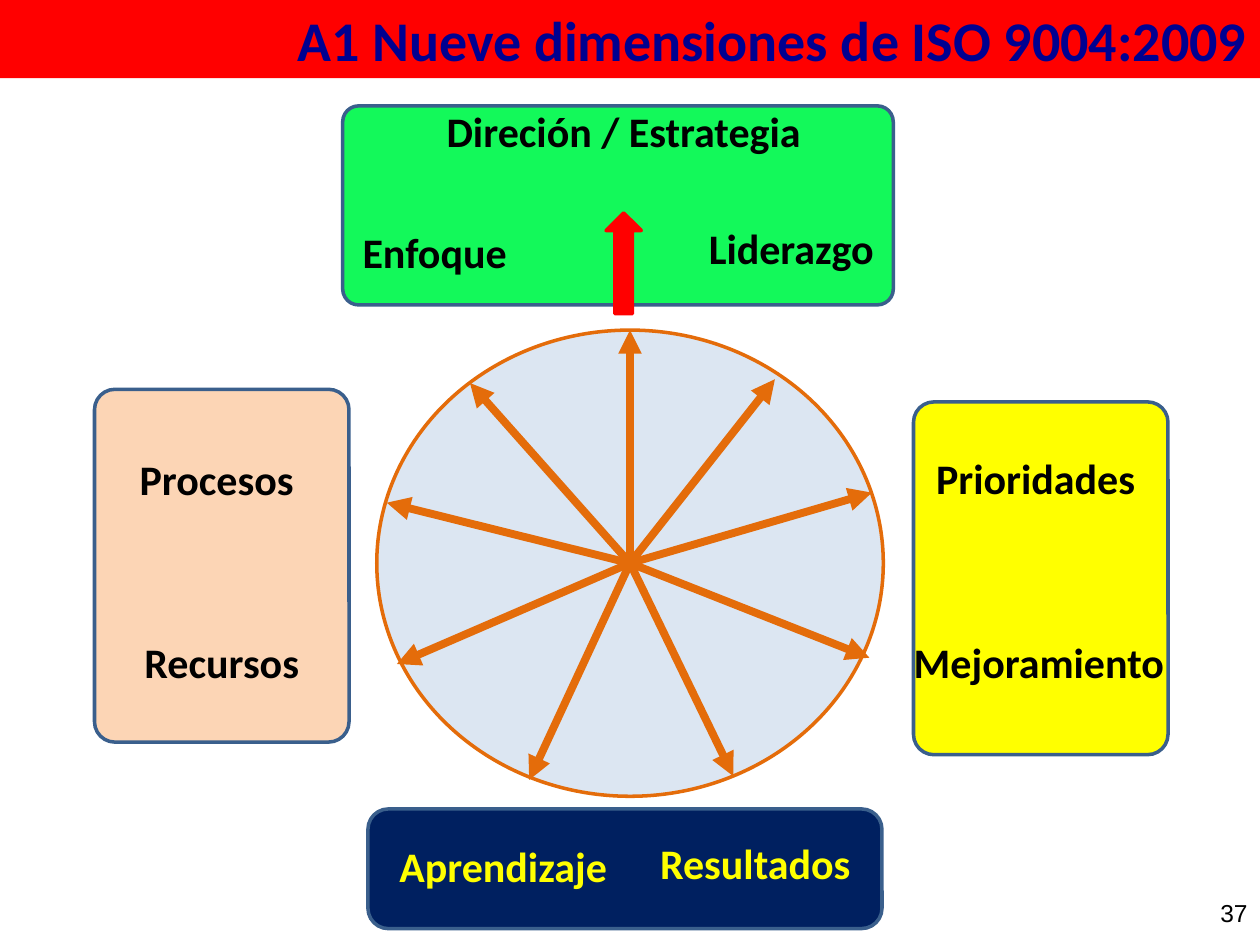
from pptx import Presentation
from pptx.dml.color import RGBColor
from pptx.enum.shapes import MSO_CONNECTOR, MSO_SHAPE
from pptx.enum.text import MSO_ANCHOR, PP_ALIGN
from pptx.oxml.ns import qn
from pptx.util import Inches, Pt
from lxml import etree

ROUNDED = MSO_SHAPE.ROUNDED_RECTANGLE
RECTANGLE = MSO_SHAPE.RECTANGLE
ELLIPSE = MSO_SHAPE.OVAL
UP_ARROW = MSO_SHAPE.UP_ARROW
STRAIGHT = MSO_CONNECTOR.STRAIGHT
MIDDLE = MSO_ANCHOR.MIDDLE
CENTER, RIGHT = PP_ALIGN.CENTER, PP_ALIGN.RIGHT

BLACK, YELLOW, RED = "000000", "FFFF00", "FF0000"
BORDER, ORANGE = "3A5F8C", "E46C0A"

TITLE = "A1 Nueve dimensiones de ISO 9004:2009"
PAGE_NUMBER = "37"

PANELS = [
    ((7.25, 3.19, 2.02, 2.8), YELLOW, 0.08),
    ((0.75, 3.09, 2.02, 2.8), "FCD5B5", 0.08),
    ((2.72, 0.84, 4.37, 1.58), "13F95A", 0.08),
    ((2.92, 6.42, 4.08, 0.95), "002060", 0.17),
]

LABEL_HEIGHT = 0.5
LABELS = [
    ("Direción / Estrategia", 3.43, 0.79, 3.04, BLACK),
    ("Enfoque", 2.77, 1.75, 1.36, BLACK),
    ("Liderazgo", 5.52, 1.72, 1.52, BLACK),
    ("Resultados", 5.13, 6.6, 1.73, YELLOW),
    ("Aprendizaje", 3.06, 6.62, 1.87, YELLOW),
    ("Recursos", 1.04, 5, 1.44, BLACK),
    ("Procesos", 1, 3.55, 1.44, BLACK),
    ("Mejoramiento", 7.14, 5, 2.21, BLACK),
    ("Prioridades", 7.32, 3.54, 1.8, BLACK),
]

HUB = (5, 4.47)
WHEEL_SIZE = (4.02, 3.7)
RAY_TIPS = [
    (5, 2.62), (6.15, 3.01), (6.92, 3.91),
    (6.9, 5.22), (5.82, 6.16), (4.2, 6.19),
    (3.15, 5.27), (3.07, 3.99), (3.73, 3.04),
]


def color(value):
    return RGBColor.from_string(value)


def add_block(page, kind, place, fill, border=None):
    block = page.shapes.add_shape(kind, *map(Inches, place))
    block.shadow.inherit = False
    block.fill.solid()
    block.fill.fore_color.rgb = color(fill)
    if border:
        block.line.color.rgb = color(border)
        block.line.width = Pt(2)
    else:
        block.line.fill.background()
    return block


def write(shape, text, size, ink, align, font="Calibri", bold=True):
    para = shape.text_frame.paragraphs[0]
    para.text = text
    para.alignment = align
    para.font.name = font
    para.font.size = Pt(size)
    para.font.bold = bold
    para.font.color.rgb = color(ink)


def add_ray(page, tip):
    ray = page.shapes.add_connector(STRAIGHT, *map(Inches, HUB + tip))
    ray.line.color.rgb = color(ORANGE)
    ray.line.width = Pt(4.5)
    etree.SubElement(ray.line._get_or_add_ln(), qn("a:tailEnd"), type="triangle")
    etree.SubElement(ray._element.spPr, qn("a:effectLst"))


def main():
    deck = Presentation()
    deck.slide_width, deck.slide_height = Inches(10), Inches(7.5)
    page = deck.slides.add_slide(deck.slide_layouts[6])

    for place, fill, rounding in PANELS:
        panel = add_block(page, ROUNDED, place, fill, BORDER)
        panel.adjustments[0] = rounding

    add_block(page, UP_ARROW, (4.81, 1.69, 0.28, 0.8), RED, RED)

    for text, left, top, width, ink in LABELS:
        label = page.shapes.add_textbox(*map(Inches, (left, top, width, LABEL_HEIGHT)))
        label.text_frame.word_wrap = False
        write(label, text, 24, ink, CENTER)

    banner = add_block(page, RECTANGLE, (0, 0, 10, 0.62), RED)
    banner.text_frame.vertical_anchor = MIDDLE
    write(banner, TITLE, 32, "000090", RIGHT)

    corner = tuple(middle - size / 2 for middle, size in zip(HUB, WHEEL_SIZE))
    add_block(page, ELLIPSE, corner + WHEEL_SIZE, "DCE6F2", ORANGE)
    for tip in RAY_TIPS:
        add_ray(page, tip)

    number = page.shapes.add_textbox(*map(Inches, (7.67, 6.98, 2.33, 0.52)))
    number.text_frame.word_wrap = True
    number.text_frame.vertical_anchor = MIDDLE
    write(number, PAGE_NUMBER, 14, BLACK, RIGHT, "Arial", False)

    deck.save("out.pptx")


if __name__ == "__main__":
    main()
